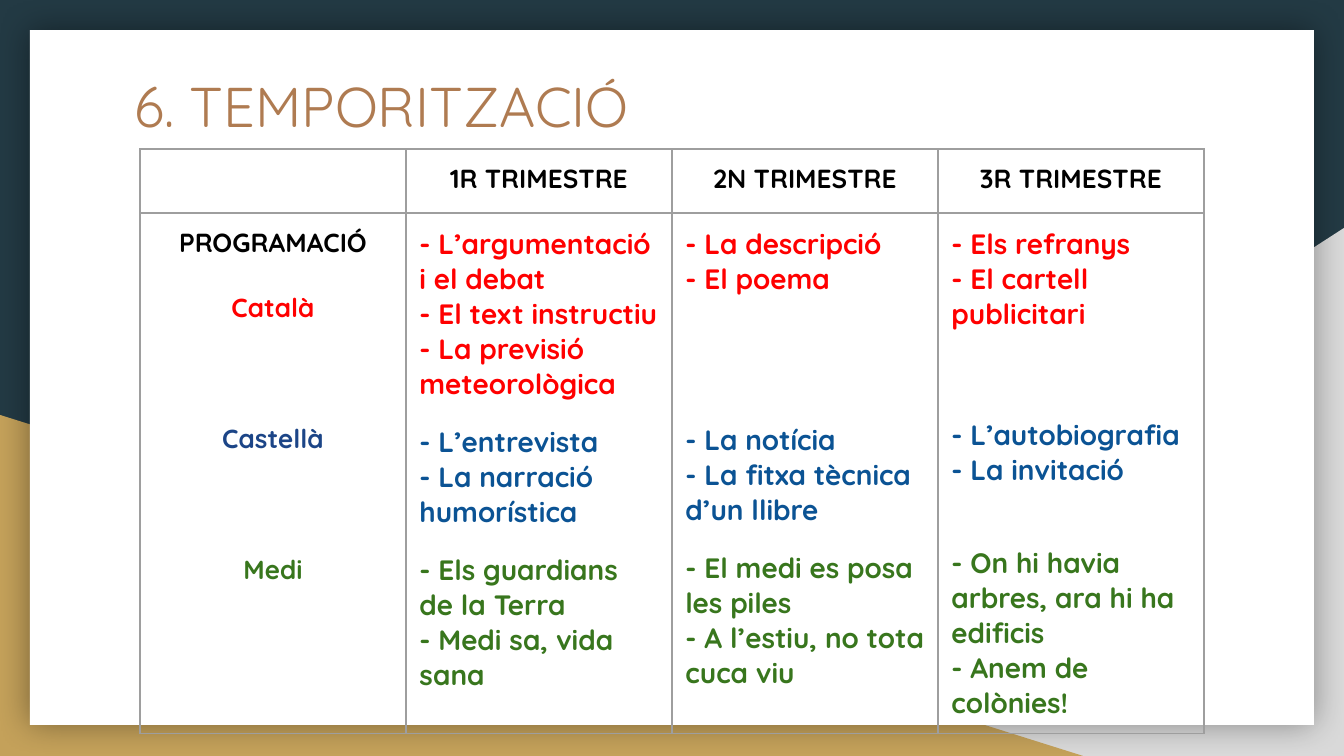
from lxml import etree
from pptx import Presentation
from pptx import util as u
from pptx.dml.color import RGBColor
from pptx.enum import shapes, text
from pptx.oxml import ns

PX = 914400 / 134.4
FONT = "Quicksand"
COLORS = {
    "night": "233A44", "silver": "D9D9D9", "gold": "C4A15A", "white": "FFFFFF",
    "bronze": "AF7B51", "black": "000000", "border": "9E9E9E",
    "red": "FF0000", "navy": "1C4587", "blue": "0B5394", "green": "38761D",
}
LEFT, CENTER = text.PP_ALIGN.LEFT, text.PP_ALIGN.CENTER


def px(length):
    return u.Emu(round(length * PX))


def color(name):
    return RGBColor.from_string(COLORS[name])


def write(paragraph, words, size, ink, bold=False, align=LEFT, before=0):
    paragraph.alignment = align
    paragraph.space_before = u.Pt(before)
    run = paragraph.add_run()
    run.text = words
    run.font.name = FONT
    run.font.size = u.Pt(size)
    run.font.bold = bold
    run.font.color.rgb = color(ink)


def add_xml(parent, tag, **attributes):
    child = etree.SubElement(parent, ns.qn(tag))
    for name, value in attributes.items():
        child.set(name, str(value))
    return child


class Deck:
    def __init__(self, width, height):
        self.presentation = Presentation()
        self.presentation.slide_width = px(width)
        self.presentation.slide_height = px(height)
        title_only = self.presentation.slide_layouts[5]
        self.slide = self.presentation.slides.add_slide(title_only)

    def background(self, fill):
        backdrop = self.slide.background.fill
        backdrop.solid()
        backdrop.fore_color.rgb = color(fill)

    def shape(self, preset, box, fill, flip=False, glow=False):
        """Add a borderless shape; glow puts a soft shadow all round it."""
        shape = self.slide.shapes.add_shape(preset, *map(px, box))
        shape.shadow.inherit = False
        shape.fill.solid()
        shape.fill.fore_color.rgb = color(fill)
        shape.line.fill.background()
        properties = shape._element.spPr
        if flip:
            properties.find(ns.qn("a:xfrm")).set("flipH", "1")
        if glow:
            effects = properties.find(ns.qn("a:effectLst"))
            shadow = add_xml(effects, "a:outerShdw", blurRad=u.Pt(18),
                             dist=0, dir=0, algn="ctr", rotWithShape=0)
            black = add_xml(shadow, "a:srgbClr", val=COLORS["black"])
            add_xml(black, "a:alpha", val=40000)

    def title(self, words, box, size, ink):
        title = self.slide.shapes.title
        title.left, title.top, title.width, title.height = map(px, box)
        frame = title.text_frame
        frame.auto_size = text.MSO_AUTO_SIZE.NONE
        frame.vertical_anchor = text.MSO_ANCHOR.TOP
        frame.margin_left = frame.margin_right = u.Inches(0.1)
        frame.margin_top = frame.margin_bottom = u.Inches(0.1)
        write(frame.paragraphs[0], words, size, ink)
        self.slide.shapes._spTree.append(title._element)  # bring to front

    def table(self, left, top, column_width, row_heights, rows):
        """Each cell in rows is a list of keyword dicts for write()."""
        columns = len(rows[0])
        table = self.slide.shapes.add_table(
            len(rows), columns, px(left), px(top),
            px(column_width * columns), px(sum(row_heights))).table
        for column in table.columns:
            column.width = px(column_width)
        for row, height in zip(table.rows, row_heights):
            row.height = px(height)
        for r, row in enumerate(rows):
            for c, lines in enumerate(row):
                self.cell(table.cell(r, c), lines)

    def cell(self, cell, lines):
        margin = u.Inches(0.1 if lines else 0)
        cell.margin_left = cell.margin_right = margin
        cell.margin_top = cell.margin_bottom = margin
        properties = cell._tc.get_or_add_tcPr()
        for side in ("a:lnL", "a:lnR", "a:lnT", "a:lnB"):
            line = add_xml(properties, side, w=u.Pt(0.75))
            add_xml(add_xml(line, "a:solidFill"), "a:srgbClr", val=COLORS["border"])
        cell.fill.background()
        frame = cell.text_frame
        for i, line in enumerate(lines):
            paragraph = frame.add_paragraph() if i else frame.paragraphs[0]
            write(paragraph, bold=True, **line)


def heading(words, ink="black", before=0):
    return dict(words=words, size=14, ink=ink, align=CENTER, before=before)


def term(gaps, *subjects):
    """Lines for one term: a group of topics per subject, set apart by gaps."""
    lines = []
    for ink, gap, topics in zip(("red", "blue", "green"), (0, *gaps), subjects):
        for i, topic in enumerate(topics):
            lines.append(dict(words="- " + topic, size=15, ink=ink,
                              before=0 if i else gap))
    return lines


def main():
    deck = Deck(1344, 756)
    triangle = shapes.MSO_SHAPE.RIGHT_TRIANGLE
    deck.background("night")
    deck.shape(triangle, (527, 228, 817, 528), "silver", flip=True)
    deck.shape(triangle, (0, 415, 1083, 341), "gold")
    deck.shape(shapes.MSO_SHAPE.RECTANGLE, (30, 30, 1284, 695), "white", glow=True)
    deck.title("6. TEMPORITZACIÓ", (121, 58, 697, 140), 30, "bronze")

    terms = ("1R TRIMESTRE", "2N TRIMESTRE", "3R TRIMESTRE")
    header = [[]] + [[heading(name)] for name in terms]
    programme = [
        [heading("PROGRAMACIÓ"), heading("Català", "red", 17.5),
         heading("Castellà", "navy", 52.5), heading("Medi", "green", 52.5)],
        term((12.5, 12.5),
             ["L’argumentació i el debat", "El text instructiu",
              "La previsió meteorològica"],
             ["L’entrevista", "La narració humorística"],
             ["Els guardians de la Terra", "Medi sa, vida sana"]),
        term((67.5, 12.5),
             ["La descripció", "El poema"],
             ["La notícia", "La fitxa tècnica d’un llibre"],
             ["El medi es posa les piles", "A l’estiu, no tota cuca viu"]),
        term((46.25, 31.25),
             ["Els refranys", "El cartell publicitari"],
             ["L’autobiografia", "La invitació"],
             ["On hi havia arbres, ara hi ha edificis", "Anem de colònies!"]),
    ]
    deck.table(140, 149, 266, (64, 520), [header, programme])
    deck.presentation.save("out.pptx")


if __name__ == "__main__":
    main()
